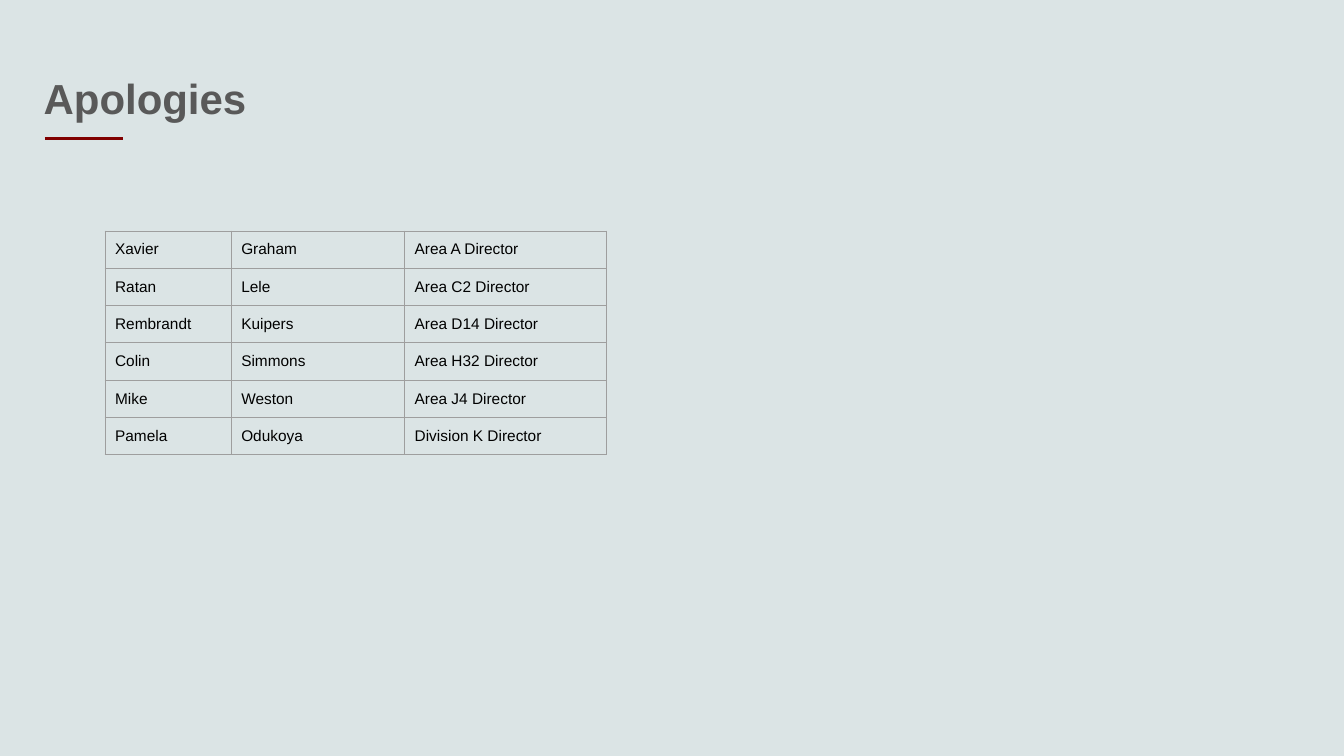
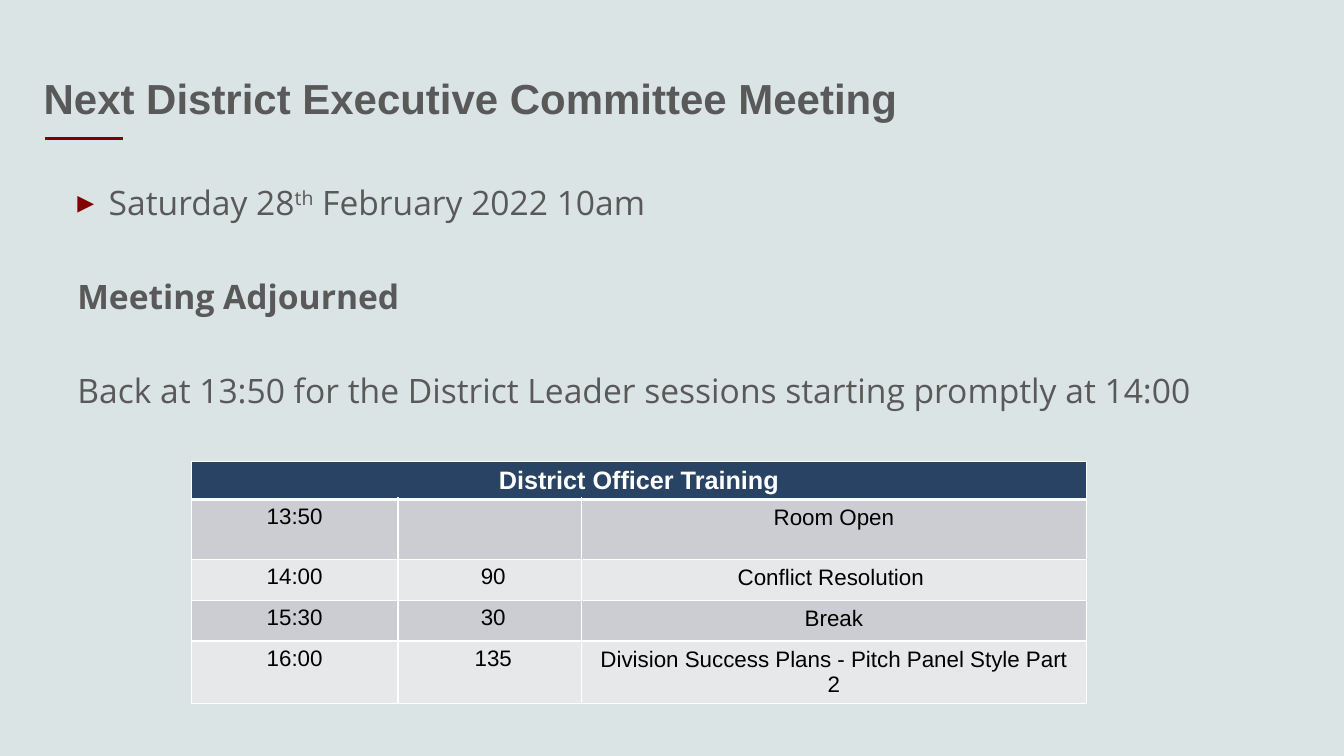
"""Build the apologies slide and the next-meeting slide of a committee deck."""
from lxml import etree
from pptx import Presentation
from pptx import util as u
from pptx.dml.color import RGBColor
from pptx.enum import shapes, text
from pptx.oxml import ns

COLORS = {
    "back": "DBE4E5", "accent": "800000", "grey": "595959", "black": "000000",
    "white": "FFFFFF", "rule": "9E9E9E", "navy": "294364",
    "band_dark": "CBCDD2", "band_light": "E7E8EA",
}
TITLES = ["Apologies", "Next District Executive Committee Meeting"]
ABSENT = [
    ("Xavier", "Graham", "Area A Director"),
    ("Ratan", "Lele", "Area C2 Director"),
    ("Rembrandt", "Kuipers", "Area D14 Director"),
    ("Colin", "Simmons", "Area H32 Director"),
    ("Mike", "Weston", "Area J4 Director"),
    ("Pamela", "Odukoya", "Division K Director"),
]
SESSIONS = [
    ("District Officer Training", "", ""),
    ("13:50", "", "Room Open"),
    ("14:00", "90", "Conflict Resolution "),
    ("15:30", "30", "Break"),
    ("16:00", "135", "Division Success Plans - Pitch Panel Style Part 2"),
]
BODY = [
    ["Saturday 28", "th", " February 2022 10am"],
    ["Meeting Adjourned"],
    ["Back at 13:50 for the District Leader sessions starting promptly at 14:00"],
]


def style(p, size, color, font="Arial", bold=False):
    for r in p.runs:
        r.font.size = u.Pt(size)
        r.font.name = font
        r.font.bold = bold
        r.font.color.rgb = RGBColor.from_string(COLORS[color])


def add_grid(s, left, top, widths, heights, rows, size, color, border, points):
    frame = s.shapes.add_table(len(rows), len(widths), u.Cm(left), u.Cm(top),
                               u.Cm(sum(widths)), u.Cm(sum(heights)))
    table = frame.table
    table.first_row = table.horz_banding = False
    for column, width in zip(table.columns, widths):
        column.width = u.Cm(width)
    for row, height, values in zip(table.rows, heights, rows):
        row.height = u.Cm(height)
        for cell, value in zip(row.cells, values):
            cell.text_frame.text = value
            style(cell.text_frame.paragraphs[0], size, color)
            props = cell._tc.get_or_add_tcPr()
            for side in ("lnL", "lnR", "lnT", "lnB"):
                ln = etree.SubElement(props, ns.qn("a:" + side), w=str(u.Pt(points)))
                fill = etree.SubElement(ln, ns.qn("a:solidFill"))
                etree.SubElement(fill, ns.qn("a:srgbClr"), val=COLORS[border])
            cell.fill.background()
    return table


prs = Presentation()
prs.slide_width, prs.slide_height = u.Cm(33.87), u.Cm(19.05)
back = prs.slide_master.background.fill
back.solid()
back.fore_color.rgb = RGBColor.from_string(COLORS["back"])

slides = []
for title in TITLES:
    s = prs.slides.add_slide(prs.slide_layouts[6])
    slides.append(s)
    line = s.shapes.add_connector(shapes.MSO_CONNECTOR.STRAIGHT,
                                  u.Cm(1.13), u.Cm(3.48), u.Cm(3.1), u.Cm(3.48))
    line.line.color.rgb = RGBColor.from_string(COLORS["accent"])
    line.line.width = u.Pt(2.25)
    etree.SubElement(line._element.spPr, ns.qn("a:effectLst"))
    sp = s.shapes.add_textbox(u.Cm(0.85), u.Cm(1.65), u.Cm(31.9), u.Cm(1.8))
    tf = sp.text_frame
    tf.word_wrap = True
    tf.vertical_anchor = text.MSO_ANCHOR.MIDDLE
    tf.text = title
    tf.paragraphs[0].line_spacing = 0.9
    style(tf.paragraphs[0], 30, "grey", bold=True)

apologies, meeting = slides

table = add_grid(apologies, 2.65, 5.82, [3.18, 4.37, 5.08], [0.94] * len(ABSENT),
                 ABSENT, 11, "black", "rule", 0.75)
for cell in table.iter_cells():
    cell.margin_left = cell.margin_right = u.Cm(0.25)
    cell.margin_top, cell.margin_bottom = u.Cm(0.25), u.Cm(0.22)

sp = meeting.shapes.add_textbox(u.Cm(1.7), u.Cm(4.45), u.Cm(30.48), u.Cm(14.17))
tf = sp.text_frame
tf.word_wrap = True
for i, parts in enumerate(BODY):
    p = tf.add_paragraph() if i else tf.paragraphs[0]
    for part in parts:
        r = p.add_run()
        r.text = part
    if i:
        p.space_before = u.Pt(38.3)
    style(p, 24, "grey", "Open Sans", bold=i == 1)

date = tf.paragraphs[0]
date.runs[1]._r.get_or_add_rPr().set("baseline", "30000")
props = date._p.get_or_add_pPr()
props.set("marL", str(u.Cm(0.79)))
props.set("indent", str(-u.Cm(0.79)))
bullet = etree.SubElement(props, ns.qn("a:buClr"))
etree.SubElement(bullet, ns.qn("a:srgbClr"), val=COLORS["accent"])
etree.SubElement(props, ns.qn("a:buFont"), typeface="Arial")
etree.SubElement(props, ns.qn("a:buChar"), char="▸")

table = add_grid(meeting, 4.82, 11.62, [5.21, 4.62, 12.73],
                 [0.95, 1.51, 1.03, 1.03, 1.55], SESSIONS, 16, "black", "white", 1)
for i, row in enumerate(table.rows):
    band = "navy" if i == 0 else "band_dark" if i % 2 else "band_light"
    for j, cell in enumerate(row.cells):
        cell.fill.solid()
        cell.fill.fore_color.rgb = RGBColor.from_string(COLORS[band])
        cell.margin_left = u.Cm([0.2, 0.38, 0.25][j])
        cell.margin_right = u.Cm([0.2, 0.2, 0.25][j])
        cell.margin_top = u.Cm(0.15 if i and j == 2 else 0.13)
        cell.margin_bottom = u.Cm(0.07)
        cell.text_frame.paragraphs[0].alignment = text.PP_ALIGN.CENTER
        if i < 2:
            edge = cell._tc.tcPr.find(ns.qn("a:lnT" if i else "a:lnB"))
            edge.set("w", str(u.Pt(3)))
header = table.cell(0, 0)
header.merge(table.cell(0, 2))
style(header.text_frame.paragraphs[0], 18, "white", bold=True)

prs.save("out.pptx")
